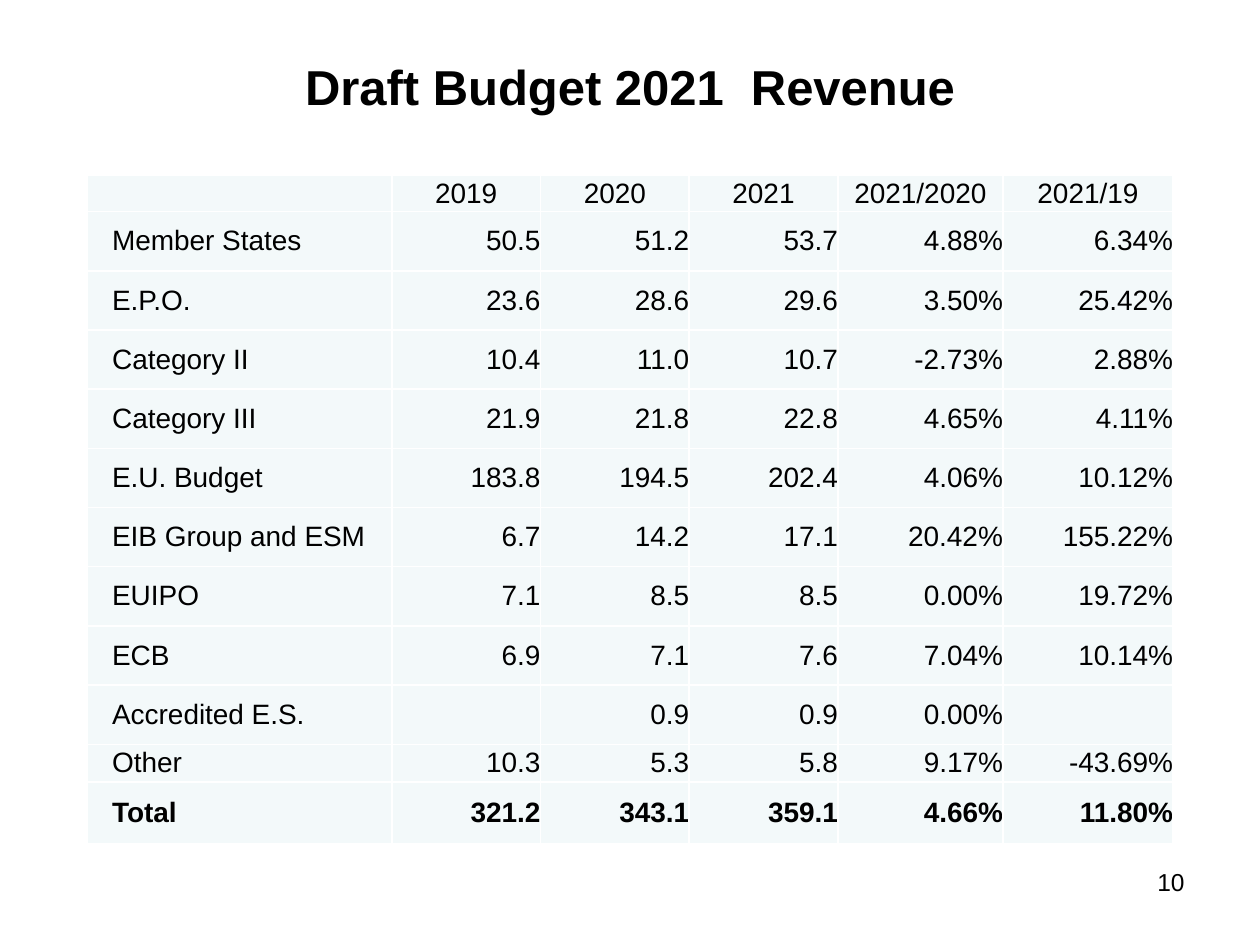
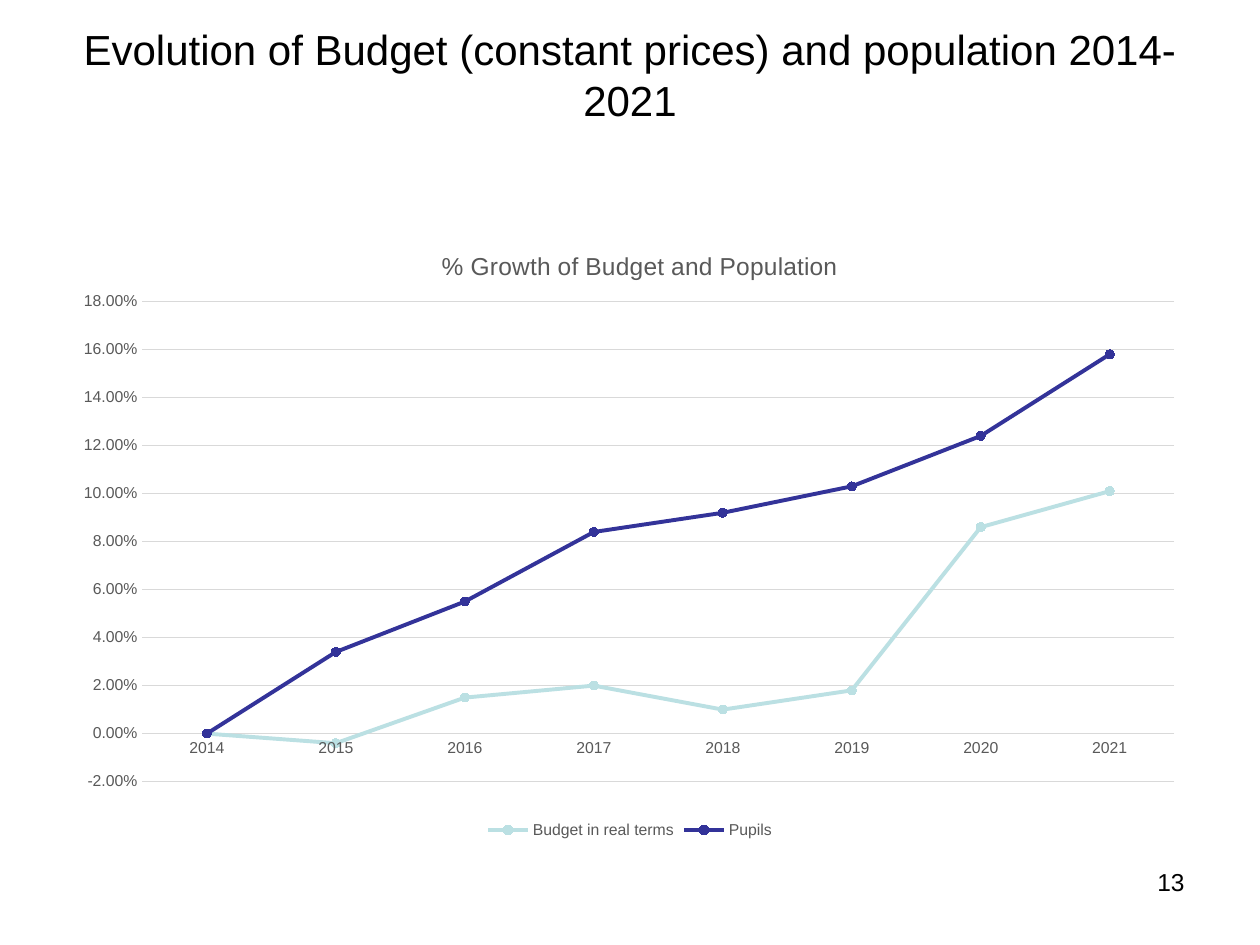
from lxml import etree
from pptx import Presentation
from pptx.chart.data import CategoryChartData
from pptx.dml.color import RGBColor
from pptx.enum.chart import XL_CHART_TYPE, XL_LEGEND_POSITION, XL_MARKER_STYLE, XL_TICK_MARK
from pptx.enum.text import MSO_ANCHOR, PP_ALIGN
from pptx.oxml.ns import qn
from pptx.util import Inches, Pt

LEFT, CENTER, RIGHT = PP_ALIGN.LEFT, PP_ALIGN.CENTER, PP_ALIGN.RIGHT
TOP, MIDDLE = MSO_ANCHOR.TOP, MSO_ANCHOR.MIDDLE
LINE, CIRCLE = XL_CHART_TYPE.LINE_MARKERS, XL_MARKER_STYLE.CIRCLE
BOTTOM, NO_TICK = XL_LEGEND_POSITION.BOTTOM, XL_TICK_MARK.NONE

# Shared style
FONT = "Arial"
HUES = {"text": "000000", "cell": "F3F9FA", "rule": "FFFFFF", "label": "595959",
        "grid": "D9D9D9", "budget": "BBE0E3", "pupils": "333399"}

# Revenue table
REVENUE = [
    ("", "2019", "2020", "2021", "2021/2020", "2021/19"),
    ("Member States", "50.5", "51.2", "53.7", "4.88%", "6.34%"),
    ("E.P.O.", "23.6", "28.6", "29.6", "3.50%", "25.42%"),
    ("Category II", "10.4", "11.0", "10.7", "-2.73%", "2.88%"),
    ("Category III", "21.9", "21.8", "22.8", "4.65%", "4.11%"),
    ("E.U. Budget", "183.8", "194.5", "202.4", "4.06%", "10.12%"),
    ("EIB Group and ESM", "6.7", "14.2", "17.1", "20.42%", "155.22%"),
    ("EUIPO", "7.1", "8.5", "8.5", "0.00%", "19.72%"),
    ("ECB", "6.9", "7.1", "7.6", "7.04%", "10.14%"),
    ("Accredited E.S.", "", "0.9", "0.9", "0.00%", ""),
    ("Other", "10.3", "5.3", "5.8", "9.17%", "-43.69%"),
    ("Total", "321.2", "343.1", "359.1", "4.66%", "11.80%"),
]
WIDTHS = [2.42, 1.18, 1.18, 1.18, 1.31, 1.35]
HEIGHTS = [0.29] + [0.47] * 9 + [0.3, 0.49]

# Growth chart
YEARS = [str(year) for year in range(2014, 2022)]
GROWTH = [
    ("Budget in real terms", "budget", (0, -0.004, 0.015, 0.02, 0.01, 0.018, 0.086, 0.101)),
    ("Pupils", "pupils", (0, 0.034, 0.055, 0.084, 0.092, 0.103, 0.124, 0.158)),
]


def hue(name):
    return RGBColor.from_string(HUES[name])


def set_font(font, size, name="text", bold=False):
    font.name, font.size, font.bold = FONT, Pt(size), bold
    font.color.rgb = hue(name)


def write(frame, text, size, align, bold=False):
    para = frame.paragraphs[0]
    para.text, para.alignment = text, align
    set_font(para.font, size, bold=bold)


def add_slide(deck, title, size, top, height, number, anchor=MIDDLE, bold=False):
    slide = deck.slides.add_slide(deck.slide_layouts[5])
    head = slide.shapes.title
    head.left, head.top, head.width, head.height = map(Inches, (0.5, top, 9, height))
    head.text_frame.vertical_anchor = anchor
    write(head.text_frame, title, size, CENTER, bold)
    foot = slide.shapes.add_textbox(*map(Inches, (7.17, 6.83, 2.33, 0.52)))
    foot.text_frame.word_wrap = True
    write(foot.text_frame, number, 14, RIGHT)
    return slide


def add_rules(cell):
    props = cell._tc.get_or_add_tcPr()
    for side in ("lnL", "lnR", "lnT", "lnB"):
        line = etree.SubElement(props, qn("a:" + side), w=str(Pt(1)))
        fill = etree.SubElement(line, qn("a:solidFill"))
        etree.SubElement(fill, qn("a:srgbClr"), val=HUES["rule"])


def add_revenue(slide):
    spot = map(Inches, (0.69, 1.39, sum(WIDTHS), sum(HEIGHTS)))
    table = slide.shapes.add_table(len(REVENUE), len(WIDTHS), *spot).table
    for col, width in zip(table.columns, WIDTHS):
        col.width = Inches(width)
    for row, height in zip(table.rows, HEIGHTS):
        row.height = Inches(height)
    last = len(REVENUE) - 1
    for r, texts in enumerate(REVENUE):
        for c, text in enumerate(texts):
            cell = table.cell(r, c)
            cell.margin_left = Inches(0.2 if c == 0 else 0)
            cell.margin_right = cell.margin_top = cell.margin_bottom = 0
            cell.vertical_anchor = MIDDLE
            add_rules(cell)
            cell.fill.solid()
            cell.fill.fore_color.rgb = hue("cell")
            align = CENTER if r == 0 else LEFT if c == 0 else RIGHT
            write(cell.text_frame, text, 16, align, bold=r == last)


def place(part, index, **spots):
    """Give a chart part a manual layout, in fractions of the chart."""
    old = part.find(qn("c:layout"))
    if old is not None:
        part.remove(old)
    layout = etree.Element(qn("c:layout"))
    part.insert(index, layout)
    manual = etree.SubElement(layout, qn("c:manualLayout"))
    if "w" in spots:
        etree.SubElement(manual, qn("c:layoutTarget"), val="inner")
    for key in "xy":
        etree.SubElement(manual, qn(f"c:{key}Mode"), val="edge")
    for key, value in spots.items():
        etree.SubElement(manual, qn("c:" + key), val=str(value))


def add_growth(slide):
    data = CategoryChartData(number_format="0.00%")
    data.categories = YEARS
    for name, _, values in GROWTH:
        data.add_series(name, values)
    spot = map(Inches, (0.5, 1.75, 9, 4.95))
    chart = slide.shapes.add_chart(LINE, *spot, data).chart
    set_font(chart.font, 10)

    # Title and legend
    frame = chart.chart_title.text_frame
    frame.text = "% Growth of Budget and Population"
    set_font(frame.paragraphs[0].font, 14, "label")
    chart.has_legend = True
    chart.legend.position = BOTTOM
    chart.legend.include_in_layout = False
    set_font(chart.legend.font, 9, "label")

    # Axes
    years, rates = chart.category_axis, chart.value_axis
    for axis in (years, rates):
        axis.major_tick_mark = axis.minor_tick_mark = NO_TICK
        set_font(axis.tick_labels.font, 9, "label")
    rates.minimum_scale, rates.maximum_scale, rates.major_unit = -0.02, 0.18, 0.02
    rates.tick_labels.number_format = "0.00%"
    rates.tick_labels.number_format_is_linked = False
    rates.format.line.fill.background()
    for line in (years.format.line, rates.major_gridlines.format.line):
        line.color.rgb, line.width = hue("grid"), Pt(0.75)

    # Series
    plot = chart.plots[0]
    plot.vary_by_categories = False
    for series, (_, name, _) in zip(plot.series, GROWTH):
        series.smooth = False
        series.format.line.color.rgb = hue(name)
        series.format.line.width = Pt(2.25)
        mark = series.marker
        mark.style, mark.size = CIRCLE, 5
        mark.format.fill.solid()
        mark.format.fill.fore_color.rgb = hue(name)
        mark.format.line.color.rgb = hue(name)

    root = chart._chartSpace.chart
    place(root.find(qn("c:title")), 1, x=0.33, y=0.04)
    place(root.plotArea, 0, x=0.07, y=0.13, w=0.91, h=0.77)


def main():
    deck = Presentation()
    deck.slide_width, deck.slide_height = Inches(10), Inches(7.5)
    add_revenue(add_slide(deck, "Draft Budget 2021  Revenue", 28, 0.22, 0.93, "10", bold=True))
    add_growth(add_slide(deck, "Evolution of Budget (constant prices) and population 2014-2021",
                         24, 0.14, 1.25, "13", anchor=TOP))
    deck.save("out.pptx")


if __name__ == "__main__":
    main()
